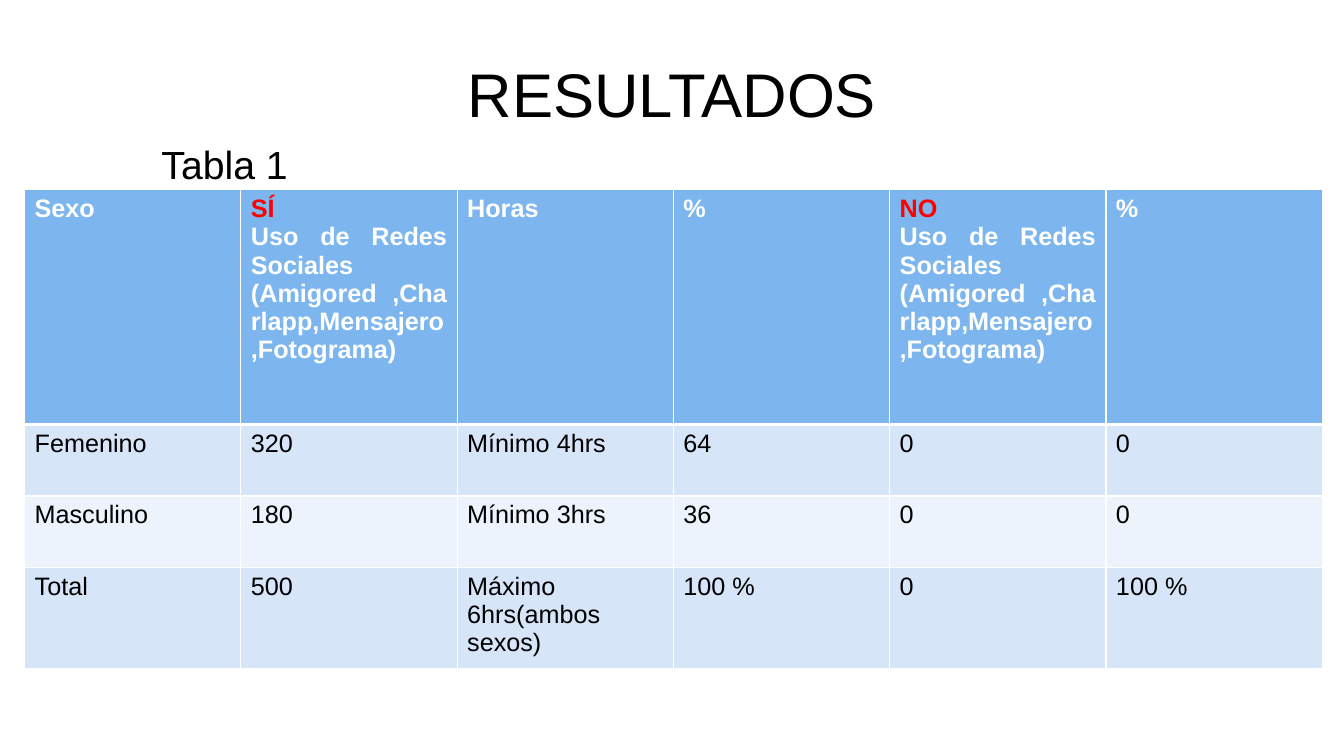
from lxml.etree import SubElement
from pptx import Presentation
from pptx.dml.color import RGBColor
from pptx.enum.text import MSO_ANCHOR as Anchor, PP_ALIGN as Align
from pptx.oxml.ns import qn
from pptx.util import Cm, Pt

FONT = "Arial"
WHITE, BLACK, RED = "FFFFFF", "000000", "FF0000"
HEADER_FILL = "7DB6EF"
BAND_FILLS = ["D7E5F9", "ECF3FC"]

USE = "Uso de Redes Sociales"
NETWORKS = "(Amigored ,Charlapp,Mensajero,Fotograma)"
HEADERS = [
    [("Sexo", WHITE)],
    [("SÍ", RED), (USE, WHITE), (NETWORKS, WHITE)],
    [("Horas", WHITE)],
    [("%", WHITE)],
    [("NO", RED), (f"{USE} {NETWORKS}", WHITE)],
    [("%", WHITE)],
]
ROWS = [
    ["Femenino", "320", "Mínimo 4hrs", "64", "0", "0"],
    ["Masculino", "180", "Mínimo 3hrs", "36", "0", "0"],
    ["Total", "500", "Máximo 6hrs(ambos sexos)", "100 %", "0", "100 %"],
]
COLUMN_WIDTH = 5.45
ROW_HEIGHTS = [5.92, 1.8, 1.8, 2.38]


def color(value):
    """Turn a hex string into a colour."""
    return RGBColor.from_string(value)


def write_lines(frame, lines, size, align, bold=False):
    """Write each (text, colour) pair as a paragraph of the frame."""
    for index, (text, shade) in enumerate(lines):
        paragraph = frame.add_paragraph() if index else frame.paragraphs[0]
        paragraph.alignment = align
        run = paragraph.add_run()
        run.text = text
        run.font.name = FONT
        run.font.size = Pt(size)
        run.font.bold = bold
        run.font.color.rgb = color(shade)


def add_heading(slide, text, size, left, top, width, height):
    """Add a centred line of text."""
    box = slide.shapes.add_textbox(Cm(left), Cm(top), Cm(width), Cm(height))
    frame = box.text_frame
    frame.word_wrap = True
    frame.vertical_anchor = Anchor.MIDDLE
    write_lines(frame, [(text, BLACK)], size, Align.CENTER)


def add_borders(cell, top, bottom):
    """Draw white borders around a cell, with widths in points."""
    properties = cell._tc.get_or_add_tcPr()
    for side, width in [("L", 1), ("R", 1), ("T", top), ("B", bottom)]:
        line = SubElement(properties, qn(f"a:ln{side}"), w=str(Pt(width)))
        fill = SubElement(line, qn("a:solidFill"))
        SubElement(fill, qn("a:srgbClr"), val=WHITE)


def fill_cell(cell, lines, background, bold=False, top=1, bottom=1):
    """Give a cell its borders, background and text."""
    add_borders(cell, top, bottom)
    cell.fill.solid()
    cell.fill.fore_color.rgb = color(background)
    write_lines(cell.text_frame, lines, 18, Align.JUSTIFY, bold)


def add_results_table(slide, left, top):
    """Add the table of results by sex."""
    count = len(HEADERS)
    table = slide.shapes.add_table(
        len(ROW_HEIGHTS), count, Cm(left), Cm(top),
        Cm(COLUMN_WIDTH * count), Cm(sum(ROW_HEIGHTS))).table
    for column in table.columns:
        column.width = Cm(COLUMN_WIDTH)
    for row, height in zip(table.rows, ROW_HEIGHTS):
        row.height = Cm(height)
    for index, lines in enumerate(HEADERS):
        fill_cell(table.cell(0, index), lines, HEADER_FILL, bold=True, bottom=3)
    for number, values in enumerate(ROWS):
        background = BAND_FILLS[number % 2]
        for index, value in enumerate(values):
            fill_cell(table.cell(number + 1, index), [(value, BLACK)],
                      background, top=1 if number else 3)


def main():
    """Build and save the slide."""
    presentation = Presentation()
    presentation.slide_width = Cm(33.87)
    presentation.slide_height = Cm(19.05)
    slide = presentation.slides.add_slide(presentation.slide_layouts[6])
    add_heading(slide, "RESULTADOS", 44, 1.7, 0.76, 30.48, 3.18)
    add_results_table(slide, 0.62, 4.78)
    add_heading(slide, "Tabla 1", 28, 0, 2.54, 11.32, 3.18)
    presentation.save("out.pptx")


if __name__ == "__main__":
    main()
